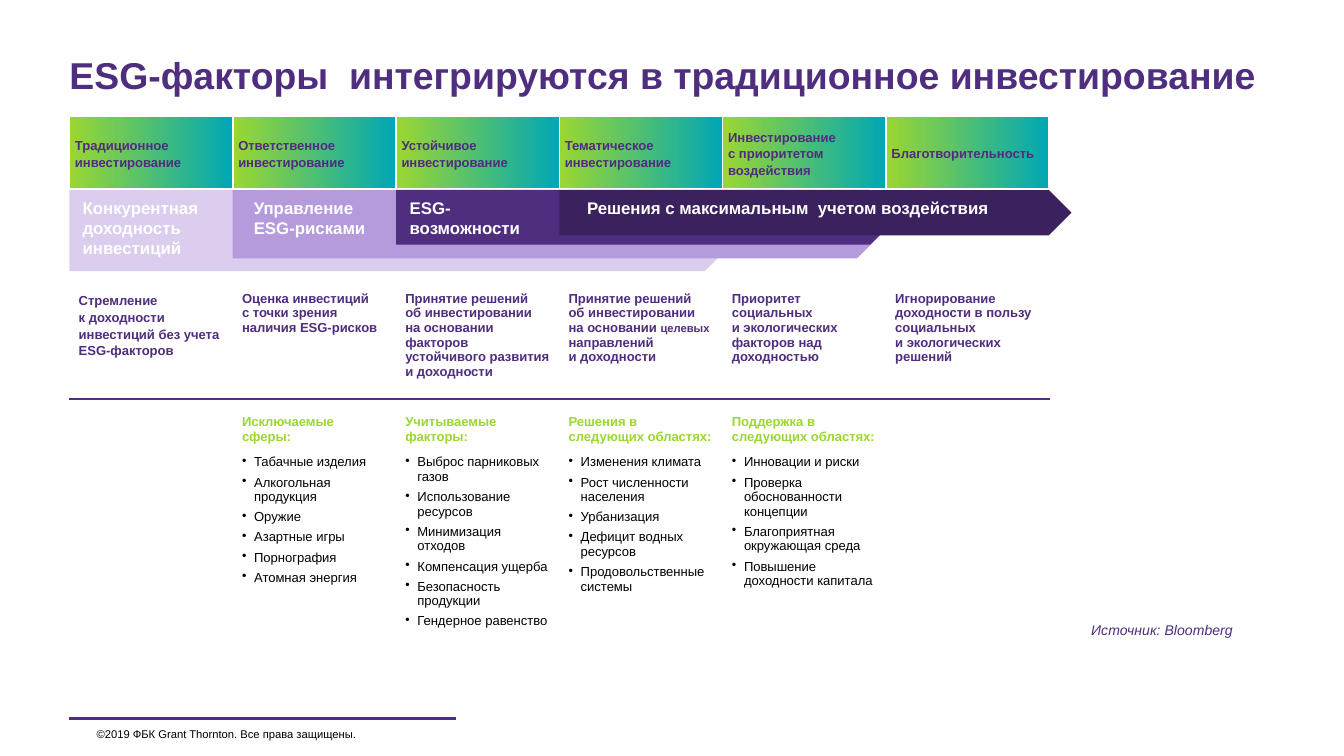
"""Builds the slide on how ESG factors enter traditional investing."""
from lxml import etree
from pptx import Presentation
from pptx.dml.color import RGBColor
from pptx.enum.shapes import MSO_CONNECTOR, MSO_SHAPE
from pptx.enum.text import MSO_ANCHOR
from pptx.oxml.ns import qn
from pptx.util import Pt

STRAIGHT = MSO_CONNECTOR.STRAIGHT
PENTAGON = MSO_SHAPE.PENTAGON
TOP, MIDDLE = MSO_ANCHOR.TOP, MSO_ANCHOR.MIDDLE

PURPLE, GREEN, TEAL, WHITE, BLACK = "4F2D7F", "9BD732", "00A7B5", "FFFFFF", "000000"
LEFT, COL_W, COLS = 37.2, 87.5, 6
PLATE_TOP = 101.8

APPROACHES = [
    "Традиционное инвестирование",
    "Ответственное инвестирование",
    "Устойчивое инвестирование",
    "Тематическое инвестирование",
    "Инвестирование\nс приоритетом воздействия",
    "Благотворительность",
]
GOALS = [
    [("Стремление\nк доходности инвестиций без учета ESG-факторов", 7)],
    [("Оценка инвестиций\nс точки зрения наличия ESG-рисков", 7)],
    [("Принятие решений\nоб инвестировании на основании факторов устойчивого развития и доходности", 7)],
    [("Принятие решений\nоб инвестировании на основании ", 7), ("целевых", 6),
     (" направлений\nи доходности", 7)],
    [("Приоритет социальных\nи экологических факторов над доходностью", 7)],
    [("Игнорирование доходности в пользу социальных\nи экологических решений", 7)],
]
DETAILS = [
    None,
    ("Исключаемые\nсферы:",
     ["Табачные изделия", "Алкогольная продукция", "Оружие", "Азартные игры",
      "Порнография", "Атомная энергия"]),
    ("Учитываемые факторы:",
     ["Выброс парниковых газов", "Использование ресурсов", "Минимизация отходов",
      "Компенсация ущерба", "Безопасность продукции", "Гендерное равенство"]),
    ("Решения в следующих областях:",
     ["Изменения климата", "Рост численности населения", "Урбанизация",
      "Дефицит водных ресурсов", "Продовольственные системы"]),
    ("Поддержка в следующих областях:",
     ["Инновации и риски", "Проверка обоснованности концепции",
      "Благоприятная окружающая среда", "Повышение доходности капитала"]),
    None,
]
PLATES = [(362.2, 43.4, "DACDED"), (352.8, 36.6, "B69BDC"),
          (268.6, 29.3, PURPLE), (274.3, 24.3, "3B225F")]
PLATE_LABELS = [
    (LEFT, 87.2, 40, "Конкурентная доходность инвестиций"),
    (128.9, 84.2, 29, "Управление ESG-рисками"),
    (212.4, 87.2, 29, "ESG-возможности"),
    (307.4, 248.4, 18, "Решения с максимальным  учетом воздействия"),
]


def rgb(value):
    """Turns a hex string into a colour."""
    return RGBColor.from_string(value)


def add_run(p, text, size, color, bold=False, italic=False):
    """Adds formatted text to a paragraph, with a line break at each newline."""
    for i, line in enumerate(text.split("\n")):
        if i:
            p.add_line_break()
        r = p.add_run()
        r.text = line
        r.font.name, r.font.size = "Arial", Pt(size)
        r.font.bold, r.font.italic = bold, italic
        r.font.color.rgb = rgb(color)


def add_bullet(p):
    """Gives a paragraph a hanging round bullet."""
    pPr = p._p.get_or_add_pPr()
    pPr.set("marL", str(Pt(6.5)))
    pPr.set("indent", str(-Pt(6.5)))
    etree.SubElement(pPr, qn("a:buChar")).set("char", "•")


def add_text(slide, box, text, size, color, inset=(0, 0), anchor=TOP, bold=False, italic=False):
    """Adds a wrapped text box with one paragraph."""
    tf = slide.shapes.add_textbox(*map(Pt, box)).text_frame
    tf.word_wrap = True
    tf.vertical_anchor = anchor
    tf.margin_left = tf.margin_right = Pt(inset[0])
    tf.margin_top = tf.margin_bottom = Pt(inset[1])
    add_run(tf.paragraphs[0], text, size, color, bold, italic)


def add_plate(slide, x, width, height, color):
    """Adds a flat arrow plate below the header row."""
    sp = slide.shapes.add_shape(PENTAGON, Pt(x), Pt(PLATE_TOP), Pt(width), Pt(height))
    sp.shadow.inherit = False
    sp.fill.solid()
    sp.fill.fore_color.rgb = rgb(color)
    sp.line.fill.background()


def add_line(slide, x1, x2, y, color, width):
    """Adds a horizontal line without a shadow."""
    line = slide.shapes.add_connector(STRAIGHT, Pt(x1), Pt(y), Pt(x2), Pt(y))
    line.line.color.rgb = rgb(color)
    line.line.width = Pt(width)
    etree.SubElement(line._element.spPr, qn("a:effectLst"))


def add_grid(slide, top, heights):
    """Adds a table of equal columns with no banding."""
    table = slide.shapes.add_table(len(heights), COLS, Pt(LEFT), Pt(top),
                                   Pt(COL_W * COLS), Pt(sum(heights))).table
    table.first_row = table.horz_banding = False
    for col in table.columns:
        col.width = Pt(COL_W)
    for row, height in zip(table.rows, heights):
        row.height = Pt(height)
    return table


def set_borders(cell, top=WHITE, bottom=WHITE, bottom_width=1):
    """Draws the four borders of a cell, with white sides."""
    tcPr = cell._tc.get_or_add_tcPr()
    sides = [("L", WHITE, 1), ("R", WHITE, 1), ("T", top, 1), ("B", bottom, bottom_width)]
    for i, (side, color, width) in enumerate(sides):
        ln = etree.Element(qn("a:ln" + side), w=str(Pt(width)))
        fill = etree.SubElement(ln, qn("a:solidFill"))
        etree.SubElement(fill, qn("a:srgbClr")).set("val", color)
        tcPr.insert(i, ln)


def set_margins(cell, side, top, bottom):
    """Sets the inner margins of a cell."""
    cell.margin_left = cell.margin_right = Pt(side)
    cell.margin_top, cell.margin_bottom = Pt(top), Pt(bottom)


def fill_white(cell):
    """Fills a cell with white."""
    cell.fill.solid()
    cell.fill.fore_color.rgb = rgb(WHITE)


def add_header(slide):
    """Adds the gradient row of investing approaches."""
    table = add_grid(slide, 62, [40])
    for cell, text in zip(table.rows[0].cells, APPROACHES):
        cell.fill.gradient()
        cell.fill.gradient_angle = 0
        for stop, color in zip(cell.fill.gradient_stops, (GREEN, TEAL)):
            stop.color.rgb = rgb(color)
        set_borders(cell, bottom_width=3)
        set_margins(cell, 3, 0, 0)
        cell.vertical_anchor = MIDDLE
        p = cell.text_frame.paragraphs[0]
        p.line_spacing = 1.15
        add_run(p, text, 7, PURPLE, bold=True)


def add_details(slide):
    """Adds the table of goals and the lists below them."""
    table = add_grid(slide, 153.2, [60.5, 116])
    for i, (goal, detail) in enumerate(zip(GOALS, DETAILS)):
        cell = table.cell(0, i)
        fill_white(cell)
        set_borders(cell, bottom=PURPLE)
        set_margins(cell, 5, 3, 3)
        p = cell.text_frame.paragraphs[0]
        if i == 0:
            p.line_spacing = 1.15
        for text, size in goal:
            add_run(p, text, size, PURPLE, bold=True)

        cell = table.cell(1, i)
        fill_white(cell)
        set_borders(cell, top=PURPLE)
        set_margins(cell, 5, 8.5, 3)
        if detail:
            heading, items = detail
            tf = cell.text_frame
            p = tf.paragraphs[0]
            p.space_after = Pt(6)
            add_run(p, heading, 7, GREEN, bold=True)
            for item in items:
                p = tf.add_paragraph()
                p.space_after = Pt(3)
                add_bullet(p)
                add_run(p, item, 7, BLACK)


def main():
    """Builds and saves the slide."""
    prs = Presentation()
    prs.slide_width, prs.slide_height = Pt(720), Pt(405)
    s = prs.slides.add_slide(prs.slide_layouts[6])
    add_line(s, 36.9, 244.1, 385, PURPLE, 1.5)
    add_text(s, (51.8, 386, 206.6, 14.4), "©2019 ФБК Grant Thornton. Все права защищены.",
             6, BLACK, (0, 3.6), MIDDLE)
    add_header(s)
    add_details(s)
    for i, (width, height, color) in enumerate(PLATES):
        add_plate(s, LEFT + i * COL_W, width, height, color)
    for x, width, height, text in PLATE_LABELS:
        add_text(s, (x, 102.2, width, height), text, 9, WHITE, (7.2, 3.6), bold=True)
    add_text(s, (584.6, 332.8, 80, 9.4), "Источник: Bloomberg", 7.5, PURPLE, italic=True)
    add_text(s, (LEFT, 28, 646, 66), "ESG-факторы  интегрируются в традиционное инвестирование",
             20, PURPLE, bold=True)
    prs.save("out.pptx")


if __name__ == "__main__":
    main()
